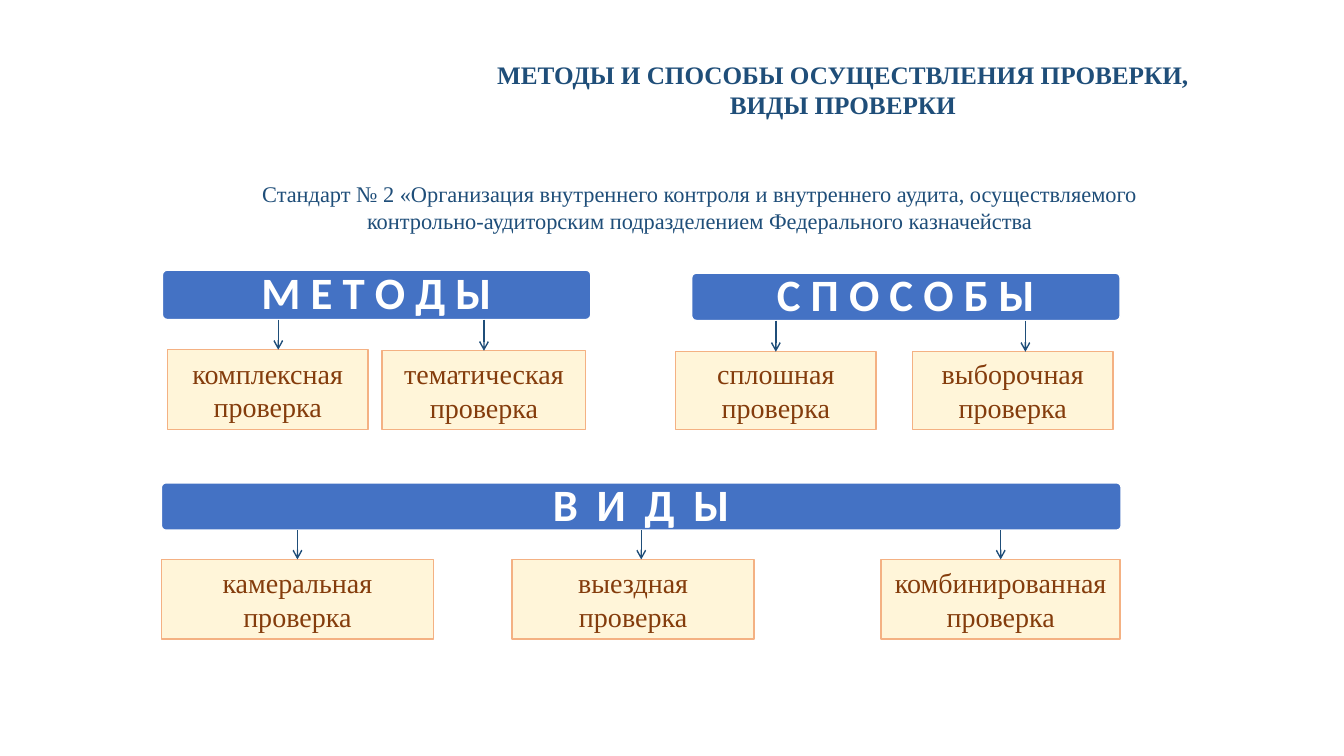
from dataclasses import dataclass

from lxml.etree import SubElement
from pptx import Presentation
from pptx.dml.color import RGBColor
from pptx.enum.shapes import MSO_CONNECTOR, MSO_SHAPE
from pptx.enum.text import MSO_ANCHOR, PP_ALIGN
from pptx.oxml.ns import qn
from pptx.util import Pt

PX = 9144  # 100 px to the inch


@dataclass(frozen=True)
class Theme:
    navy: str = "1F4E79"
    blue: str = "4472C4"
    white: str = "FFFFFF"
    amber: str = "FFC000"
    peach: str = "F4B183"
    brown: str = "843C0C"
    serif: str = "Times New Roman"
    sans: str = "Calibri"
    title: int = 18
    subtitle: int = 16
    bar: int = 32
    box: int = 20
    line: int = 1


T = Theme()


def rgb(color):
    return RGBColor.from_string(color)


def px(*lengths):
    return [round(n * PX) for n in lengths]


def set_text(sp, text, size, color, font=T.serif, bold=False):
    tf = sp.text_frame
    tf.word_wrap = True
    tf.text = text
    for p in tf.paragraphs:
        p.alignment = PP_ALIGN.CENTER
        for r in p.runs:
            r.font.name, r.font.size, r.font.bold = font, Pt(size), bold
            r.font.color.rgb = rgb(color)
    return tf


def add_label(s, at, text, size, bold=False):
    sp = s.shapes.add_textbox(*px(*at))
    set_text(sp, text, size, T.navy, bold=bold)


def add_panel(s, kind, at, fill, line):
    sp = s.shapes.add_shape(kind, *px(*at))
    sp.shadow.inherit = False
    sp.fill.solid()
    sp.fill.fore_color.rgb = rgb(fill)
    sp.line.color.rgb = rgb(line)
    sp.line.width = Pt(T.line)
    return sp


def add_bar(s, at, text, tracking):
    sp = add_panel(s, MSO_SHAPE.ROUNDED_RECTANGLE, at, T.blue, T.white)
    sp.adjustments[0] = 0.1
    tf = set_text(sp, text, T.bar, T.white, T.sans, bold=True)
    tf.vertical_anchor = MSO_ANCHOR.MIDDLE
    tf.margin_left = tf.margin_right = tf.margin_top = tf.margin_bottom = 7 * PX
    p = tf.paragraphs[0]
    p.line_spacing = 0.9
    if tracking:
        p.runs[0]._r.get_or_add_rPr().set("spc", str(tracking))
    return sp


def add_box(s, at, text):
    sp = add_panel(s, MSO_SHAPE.RECTANGLE, at, T.amber, T.peach)
    color = sp._element.spPr.find(qn("a:solidFill"))[0]
    SubElement(color, qn("a:alpha"), val="15000")
    tf = set_text(sp, text, T.box, T.brown)
    tf.vertical_anchor = MSO_ANCHOR.MIDDLE
    return sp


def add_arrow(s, bar, box, x):
    """Arrow from bar to box, joined wherever it meets the middle of a side."""
    x *= PX
    middle = box.left + box.width // 2
    at_box = abs(x - middle) <= 3 * PX
    at_bar = abs(x - bar.left - bar.width // 2) <= 3 * PX
    if at_box:
        x = middle
    c = s.shapes.add_connector(
        MSO_CONNECTOR.STRAIGHT, x, bar.top + bar.height, x, box.top)
    if at_bar:
        c.begin_connect(bar, 2)
    if at_box:
        c.end_connect(box, 0)
    c.line.color.rgb = rgb(T.navy)
    c.line.width = Pt(T.line)
    SubElement(c.line._get_or_add_ln(), qn("a:tailEnd"), type="arrow")
    SubElement(c._element.spPr, qn("a:effectLst"))


# Bar text, place and letter tracking, then its boxes: kind, place, arrow x
GROUPS = [
    ("М Е Т О Д Ы", (161, 268, 425, 49), 0, [
        ("комплексная", (166, 347, 199, 79), 276),
        ("тематическая", (379, 348, 202, 78), 477)]),
    ("С П О С О Б Ы", (686, 271, 425, 47), 0, [
        ("сплошная", (670, 349, 199, 77), 769),
        ("выборочная", (905, 349, 199, 77), 1017)]),
    ("В И Д Ы", (160, 479, 952, 47), 310, [
        ("камеральная", (160, 555, 270, 79), 296),
        ("выездная", (508, 555, 240, 79), 636),
        ("комбинированная", (874, 555, 237, 79), 993)]),
]


def main():
    prs = Presentation()
    prs.slide_width, prs.slide_height = px(1333, 750)
    s = prs.slides.add_slide(prs.slide_layouts[6])

    # Heading and the standard it rests on
    add_label(s, (450, 54, 772, 71),
              "МЕТОДЫ И СПОСОБЫ ОСУЩЕСТВЛЕНИЯ ПРОВЕРКИ, ВИДЫ ПРОВЕРКИ",
              T.title, bold=True)
    add_label(s, (152, 174, 1084, 64),
              "Стандарт № 2 «Организация внутреннего контроля и внутреннего "
              "аудита, осуществляемого\n"
              "контрольно-аудиторским подразделением Федерального казначейства",
              T.subtitle)

    # Bars with their boxes and arrows
    for heading, at, tracking, boxes in GROUPS:
        bar = add_bar(s, at, heading, tracking)
        for kind, box_at, x in boxes:
            box = add_box(s, box_at, f"{kind} проверка")
            add_arrow(s, bar, box, x)

    prs.save("out.pptx")


if __name__ == "__main__":
    main()
